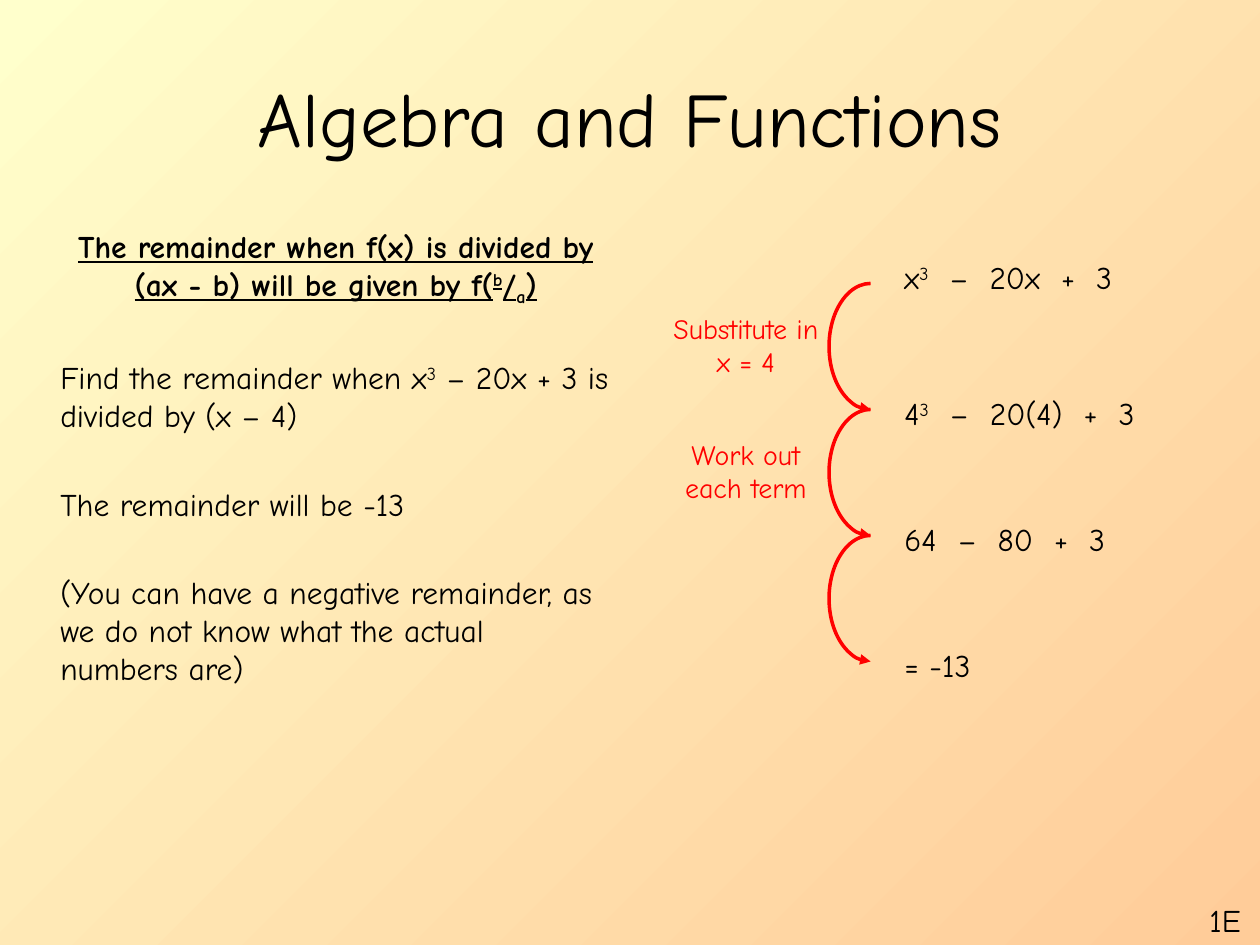
from pptx import Presentation
from pptx.dml.color import RGBColor
from pptx.enum.shapes import MSO_SHAPE as SHAPE
from pptx.enum.text import MSO_ANCHOR as ANCHOR, MSO_AUTO_SIZE as AUTO, PP_ALIGN as ALIGN
from pptx.oxml.ns import qn
from pptx.util import Inches, Pt
from lxml import etree


def rgb(value):
    return RGBColor.from_string(value)


class Deck:
    font = "Comic Neue"
    ink, accent = "000000", "FF0000"
    super_script, sub_script = 30000, -25000

    def __init__(self, width, height):
        self.prs = Presentation()
        self.prs.slide_width, self.prs.slide_height = Inches(width), Inches(height)
        self.slide = self.prs.slides.add_slide(self.prs.slide_layouts[6])

    def background(self, start, end):
        fill = self.slide.background.fill
        fill.gradient()
        fill.gradient_angle = 315
        for stop, color, position in zip(fill.gradient_stops, (start, end), (0, 1)):
            stop.color.rgb = rgb(color)
            stop.position = position

    def frame(self, x, y, w, h, grow=True):
        sp = self.slide.shapes.add_textbox(Inches(x), Inches(y), Inches(w), Inches(h))
        tf = sp.text_frame
        tf.word_wrap = True
        tf.auto_size = AUTO.SHAPE_TO_FIT_TEXT if grow else AUTO.NONE
        return tf

    def add_runs(self, p, parts, size=18, color=ink, align=ALIGN.LEFT, bold=False):
        p.alignment = align
        for part in parts:
            text, baseline = part if isinstance(part, tuple) else (part, 0)
            r = p.add_run()
            r.text = text
            r.font.name, r.font.size = self.font, Pt(size)
            r.font.color.rgb = rgb(color)
            r.font.bold = bold
            r.font.underline = bold and baseline != self.sub_script
            if baseline:
                r.font._element.set("baseline", str(baseline))

    def title(self, text, x, y, w, h):
        tf = self.frame(x, y, w, h, grow=False)
        tf.vertical_anchor = ANCHOR.MIDDLE
        self.add_runs(tf.paragraphs[0], [text], size=44, align=ALIGN.CENTER)

    def body(self, heading, paragraphs, x, y, w, h):
        tf = self.frame(x, y, w, h, grow=False)
        self.add_runs(tf.paragraphs[0], heading, align=ALIGN.CENTER, bold=True)
        for parts in paragraphs:
            p = tf.add_paragraph()
            p.space_before = Pt(29)
            self.add_runs(p, parts)
        for p in tf.paragraphs:
            p._p.get_or_add_pPr().set("marL", str(Inches(0.38)))

    def label(self, parts, x, y, w, h=0.4, **style):
        self.add_runs(self.frame(x, y, w, h).paragraphs[0], parts, **style)

    def curved_arrow(self, x, y, w, h):
        sp = self.slide.shapes.add_shape(
            SHAPE.LEFT_BRACKET, Inches(x), Inches(y), Inches(w), Inches(h))
        sp.adjustments[0] = h / w / 2
        sp.shadow.inherit = False
        sp.fill.background()
        sp.line.color.rgb = rgb(self.accent)
        sp.line.width = Pt(2)
        etree.SubElement(sp.line._get_or_add_ln(), qn("a:headEnd"), type="triangle")


def main():
    deck = Deck(10, 7.5)
    cubed = ("3", deck.super_script)
    deck.background("FFFFCC", "FFCC99")
    deck.title("Algebra and Functions", 0.5, 0.3, 9, 1.25)

    heading = ["The remainder when f(x) is divided by (ax - b) will be given by f(",
               ("b", deck.super_script), "/", ("a", deck.sub_script), ")"]
    paragraphs = [
        ["Find the remainder when x", cubed, " – 20x + 3 is divided by (x – 4)"],
        ["The remainder will be -13"],
        ["(You can have a negative remainder, as we do not know what the actual numbers are)"],
    ]
    deck.body(heading, paragraphs, 0, 1.75, 4.95, 4.95)
    deck.label(["1E"], 9.5, 7.1, 0.5)

    steps = [
        (2, 2.23, ["x", cubed, "  –  20x  +  3"]),
        (3.08, 2.23, ["4", cubed, "  –  20(4)  +  3"]),
        (4.08, 2.23, ["64  –  80  +  3"]),
        (5.08, 0.83, ["= -13"]),
    ]
    for y, w, parts in steps:
        deck.label(parts, 7.08, y, w)

    for i in range(len(steps) - 1):
        deck.curved_arrow(6.58, 2.25 + i, 0.33, 1)

    for i, reason in enumerate(["Substitute in x = 4", "Work out each term"]):
        deck.label([reason], 5.17, 2.42 + i, 1.5, 0.64,
                   size=16, color=deck.accent, align=ALIGN.CENTER)

    deck.prs.save("out.pptx")


if __name__ == "__main__":
    main()
